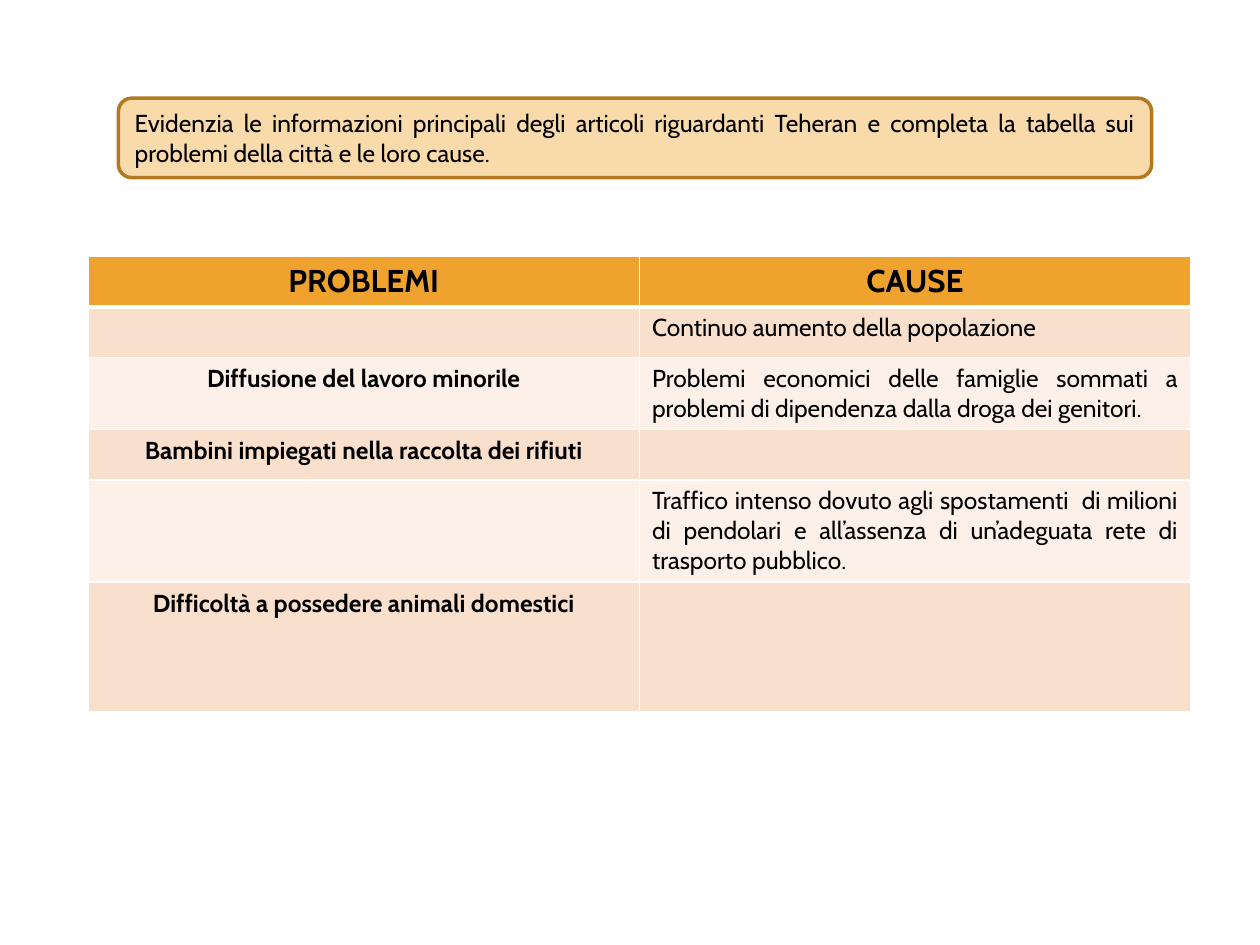
from dataclasses import dataclass

from lxml import etree
from pptx import Presentation
from pptx import util as u
from pptx.dml.color import RGBColor
from pptx.enum import shapes, text
from pptx.oxml import ns


@dataclass(frozen=True)
class Theme:
    font: str = "Cabin"
    ink: str = "000000"
    header: str = "F0A22E"
    bands: tuple = ("F9E0CD", "FCF0E8")
    box_fill: str = "F9DAAB"
    box_line: str = "B27822"
    border: str = "FFFFFF"
    head_size: int = 18
    body_size: int = 14


THEME = Theme()
CENTER, JUSTIFY = text.PP_ALIGN.CENTER, text.PP_ALIGN.JUSTIFY

INSTRUCTION = ("Evidenzia le informazioni principali degli articoli riguardanti Teheran "
               "e completa la tabella sui problemi della città e le loro cause.")
# Each row: problem, cause, height in inches
ROWS = [
    ("PROBLEMI", "CAUSE", 0.4),
    ("", "Continuo aumento della popolazione", 0.4),
    ("Diffusione del lavoro minorile",
     "Problemi economici delle famiglie sommati a problemi di dipendenza "
     "dalla droga dei genitori.", 0.57),
    ("Bambini impiegati nella raccolta dei rifiuti", "", 0.4),
    ("", "Traffico intenso dovuto agli spostamenti  di milioni di pendolari e "
     "all’assenza di un’adeguata rete di trasporto pubblico.", 0.8),
    ("Difficoltà a possedere animali domestici", "", 1.03),
]


def write(tf, words, size, align, bold=False):
    p = tf.paragraphs[0]
    p.alignment = align
    p.font.size = u.Pt(size)
    if words:
        r = p.add_run()
        r.text = words
        r.font.name, r.font.size, r.font.bold = THEME.font, u.Pt(size), bold
        r.font.color.rgb = RGBColor.from_string(THEME.ink)


def set_borders(cell, top, bottom):
    tc_pr = cell._tc.get_or_add_tcPr()
    for side, width in (("L", 1), ("R", 1), ("T", top), ("B", bottom)):
        ln = etree.SubElement(tc_pr, ns.qn(f"a:ln{side}"), w=str(u.Pt(width)))
        fill = etree.SubElement(ln, ns.qn("a:solidFill"))
        etree.SubElement(fill, ns.qn("a:srgbClr"), val=THEME.border)


def add_instruction(slide, left, top, width, height):
    sp = slide.shapes.add_shape(shapes.MSO_SHAPE.ROUNDED_RECTANGLE, left, top, width, height)
    sp.shadow.inherit = False
    sp.fill.solid()
    sp.fill.fore_color.rgb = RGBColor.from_string(THEME.box_fill)
    sp.line.color.rgb = RGBColor.from_string(THEME.box_line)
    sp.line.width = u.Pt(2)
    tf = sp.text_frame
    tf.word_wrap = True
    tf.vertical_anchor = text.MSO_ANCHOR.MIDDLE
    write(tf, INSTRUCTION, THEME.body_size, JUSTIFY)


def add_problem_table(slide, left, top, width):
    height = u.Inches(sum(row[-1] for row in ROWS))
    table = slide.shapes.add_table(len(ROWS), 2, left, top, width, height).table
    for i, (*cells, row_height) in enumerate(ROWS):
        table.rows[i].height = u.Inches(row_height)
        is_head = i == 0
        color = THEME.header if is_head else THEME.bands[(i - 1) % 2]
        size = THEME.head_size if is_head else THEME.body_size
        for j, words in enumerate(cells):
            cell = table.cell(i, j)
            # A thick rule separates the header from the body
            set_borders(cell, top=3 if i == 1 else 1, bottom=3 if is_head else 1)
            cell.fill.solid()
            cell.fill.fore_color.rgb = RGBColor.from_string(color)
            is_key = is_head or j == 0
            write(cell.text_frame, words, size, CENTER if is_key else JUSTIFY, is_key)


def main():
    prs = Presentation()
    prs.slide_width, prs.slide_height = u.Inches(10), u.Inches(7.5)
    slide = prs.slides.add_slide(prs.slide_layouts[6])
    # Instruction box above the table
    add_instruction(slide, u.Inches(0.94), u.Inches(0.78), u.Inches(8.2), u.Inches(0.63))
    # Problems and causes
    add_problem_table(slide, u.Inches(0.7), u.Inches(2.03), u.Inches(8.75))
    prs.save("out.pptx")


if __name__ == "__main__":
    main()
